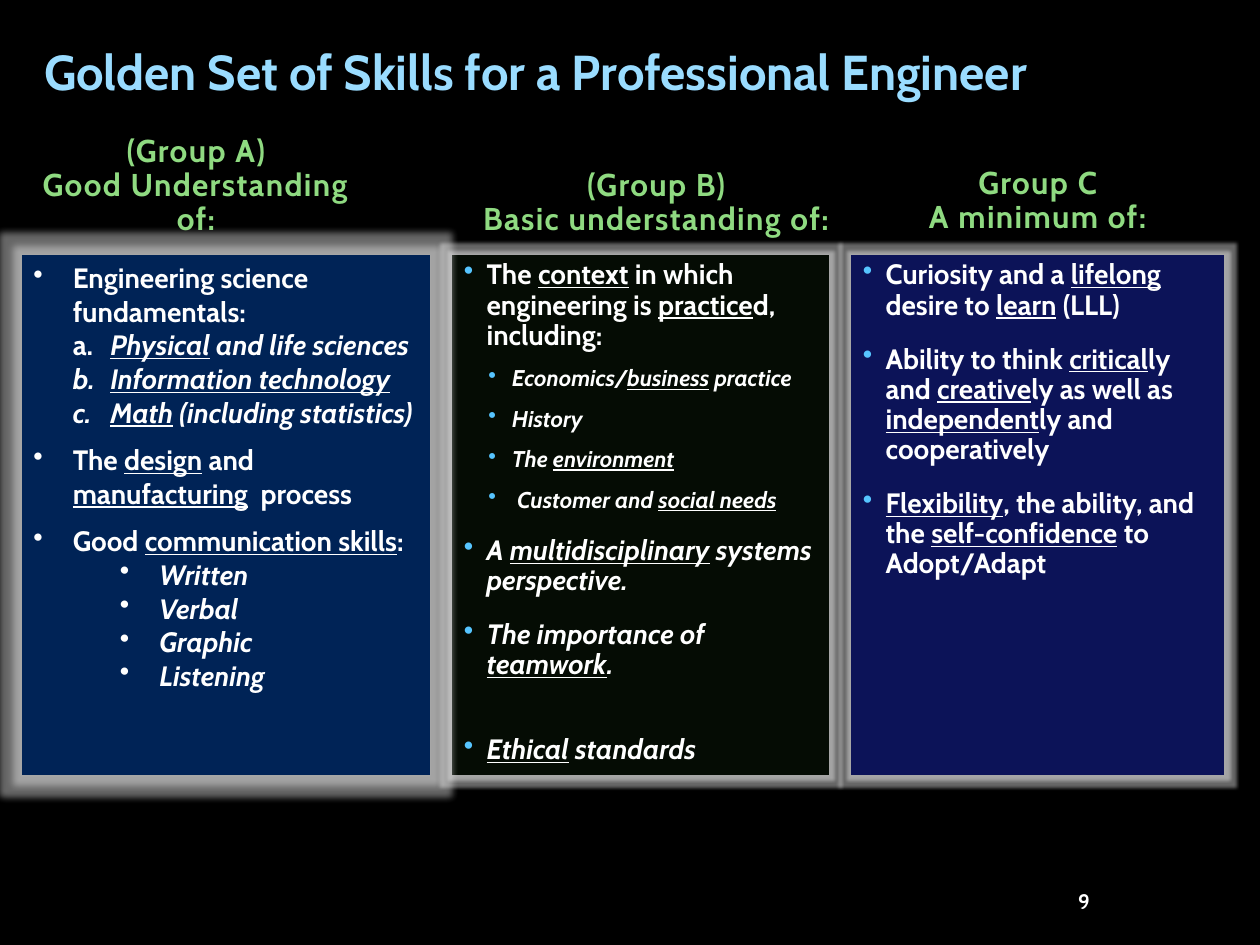
from lxml.etree import SubElement
from pptx import Presentation
from pptx.dml.color import RGBColor
from pptx.enum.shapes import MSO_SHAPE
from pptx.enum.text import MSO_ANCHOR, MSO_AUTO_SIZE, PP_ALIGN
from pptx.oxml.ns import qn
from pptx.util import Pt

FONT = "Cabin"
COLORS = {
    "background": "000000", "title": "9ADCFF", "heading": "8FDA81",
    "text": "FFFFFF", "bullet": "56C5FF", "border": "A6A6A6", "glow": "FFFFFF",
    "group_a": "002356", "group_b": "050C04", "group_c": "0C1358",
}
STYLES = {
    "a_main": dict(margin=22.5, hang=22.5, before=8, bullet="text", spacing=1.0),
    "a_letter": dict(margin=44, hang=21.5, spacing=1.0),
    "a_sub": dict(margin=72, hang=22.5, bullet="text", spacing=1.0),
    "main": dict(margin=13, hang=13, before=13.5, bullet="bullet"),
    "last": dict(margin=13, hang=13, before=31, bullet="bullet"),
    "sub": dict(margin=27.5, hang=13.5, before=9, bullet="bullet", size=13),
}
GROUP_A = [
    ("a_main", "Engineering science fundamentals:"),
    ("a_letter", "a.\t*_Physical_ and life sciences*"),
    ("a_letter", "*b.\t_Information technology_*"),
    ("a_letter", "*c.\t_Math_ (including statistics)*"),
    ("a_main", "The _design_ and _manufacturing_  process"),
    ("a_main", "Good _communication skills_:"),
    ("a_sub", "*Written*"),
    ("a_sub", "*Verbal*"),
    ("a_sub", "*Graphic*"),
    ("a_sub", "*Listening*"),
]
GROUP_B = [
    ("main", "The _context_ in which engineering is _practice_d, including:"),
    ("sub", "*Economics/_business_ practice*"),
    ("sub", "*History*"),
    ("sub", "*The _environment_*"),
    ("sub", "* Customer and _social needs_*"),
    ("main", "*A _multidisciplinary_ systems perspective.*"),
    ("main", "*The importance of _teamwork_.*"),
    ("last", "*_Ethical_ standards*"),
]
GROUP_C = [
    ("main", "Curiosity and a _lifelong_ desire to _learn_ (LLL)"),
    ("main", "Ability to think _critical_ly and _creative_ly as well as "
             "_independent_ly and cooperatively"),
    ("main", "_Flexibility_, the ability, and the _self-confidence_ to Adopt/Adapt"),
]


def rgb(name):
    """Return the named colour."""
    return RGBColor.from_string(COLORS[name])


def format_font(font, size, color):
    """Apply the slide's bold typeface."""
    font.name, font.size, font.bold = FONT, Pt(size), True
    font.color.rgb = rgb(color)


def add_marked_text(paragraph, marked, size):
    """Add runs, with asterisks toggling italics and underscores underlining."""
    for i, slanted in enumerate(marked.split("*")):
        for j, words in enumerate(slanted.split("_")):
            if words:
                run = paragraph.add_run()
                run.text = words
                format_font(run.font, size, "text")
                run.font.italic, run.font.underline = i % 2 == 1, j % 2 == 1


def add_item(paragraph, marked, first, margin, hang, before=0, bullet=None,
             size=16, spacing=0.9):
    """Fill one paragraph of a skill list."""
    paragraph.line_spacing = spacing
    paragraph.space_before = Pt(0 if first else before)
    properties = paragraph._p.get_or_add_pPr()
    properties.set("marL", str(Pt(margin)))
    properties.set("indent", str(-Pt(hang)))
    if bullet:
        bullet_color = SubElement(properties, qn("a:buClr"))
        SubElement(bullet_color, qn("a:srgbClr"), val=COLORS[bullet])
        SubElement(properties, qn("a:buChar"), char="•")
    add_marked_text(paragraph, marked, size)


def add_skills(slide, box, fill, glow, items):
    """Draw a glowing panel with its skill list."""
    panel = slide.shapes.add_shape(MSO_SHAPE.RECTANGLE, *map(Pt, box))
    panel.fill.solid()
    panel.fill.fore_color.rgb = rgb(fill)
    panel.line.color.rgb = rgb("border")
    panel.line.width = Pt(1)
    panel.shadow.inherit = False
    effects = panel._element.spPr.find(qn("a:effectLst"))
    halo = SubElement(effects, qn("a:glow"), rad=str(Pt(glow)))
    halo_color = SubElement(halo, qn("a:srgbClr"), val=COLORS["glow"])
    SubElement(halo_color, qn("a:alpha"), val="40000")
    frame = panel.text_frame
    frame.word_wrap = True
    frame.vertical_anchor = MSO_ANCHOR.TOP
    for index, (style, marked) in enumerate(items):
        paragraph = frame.add_paragraph() if index else frame.paragraphs[0]
        paragraph.alignment = PP_ALIGN.LEFT
        add_item(paragraph, marked, index == 0, **STYLES[style])


def add_heading(slide, box, text, shift):
    """Place a two-line group heading, its first line moved left by half of shift."""
    frame = slide.shapes.add_textbox(*map(Pt, box)).text_frame
    frame.word_wrap = True
    frame.vertical_anchor = MSO_ANCHOR.BOTTOM
    frame.text = text
    for paragraph in frame.paragraphs:
        paragraph.alignment = PP_ALIGN.CENTER
        paragraph.line_spacing = 0.9
        for run in paragraph.runs:
            format_font(run.font, 18, "heading")
            run.font._element.set("spc", "80")
    frame.paragraphs[0]._p.get_or_add_pPr().set("marR", str(Pt(shift)))


def add_title(slide, box, text):
    """Move and format the title placeholder."""
    title = slide.shapes.title
    title.left, title.top, title.width, title.height = map(Pt, box)
    frame = title.text_frame
    frame.text = text
    frame.word_wrap = True
    frame.auto_size = MSO_AUTO_SIZE.NONE
    frame.vertical_anchor = MSO_ANCHOR.TOP
    paragraph = frame.paragraphs[0]
    paragraph.alignment = PP_ALIGN.LEFT
    paragraph.line_spacing = 0.9
    format_font(paragraph.runs[0].font, 28, "title")


def add_page_number(slide, box, number):
    """Place the page number."""
    frame = slide.shapes.add_textbox(*map(Pt, box)).text_frame
    frame.word_wrap = True
    frame.vertical_anchor = MSO_ANCHOR.MIDDLE
    frame.text = number
    frame.paragraphs[0].alignment = PP_ALIGN.RIGHT
    format_font(frame.paragraphs[0].runs[0].font, 12, "text")


def main():
    """Build and save the slide."""
    deck = Presentation()
    deck.slide_width, deck.slide_height = Pt(720), Pt(540)
    slide = deck.slides.add_slide(deck.slide_layouts[5])
    slide.background.fill.solid()
    slide.background.fill.fore_color.rgb = rgb("background")
    add_title(slide, (18, 24, 612, 38),
              "Golden Set of Skills for a Professional Engineer")

    top, height = 145.5, 298
    add_skills(slide, (486, top, 214, height), "group_c", 4, GROUP_C)
    add_skills(slide, (258, top, 216, height), "group_b", 4, GROUP_B)
    add_skills(slide, (12, top, 234, height), "group_a", 8, GROUP_A)

    add_heading(slide, (10, 84, 219, 55), "(Group A)\nGood Understanding of:", 15)
    add_heading(slide, (258, 96, 240, 43), "(Group B)\nBasic understanding of:", 6)
    add_heading(slide, (515, 90, 156, 48), "Group C\nA minimum of:", 0)
    add_page_number(slide, (580, 504, 50, 22), "9")
    deck.save("out.pptx")


if __name__ == "__main__":
    main()
